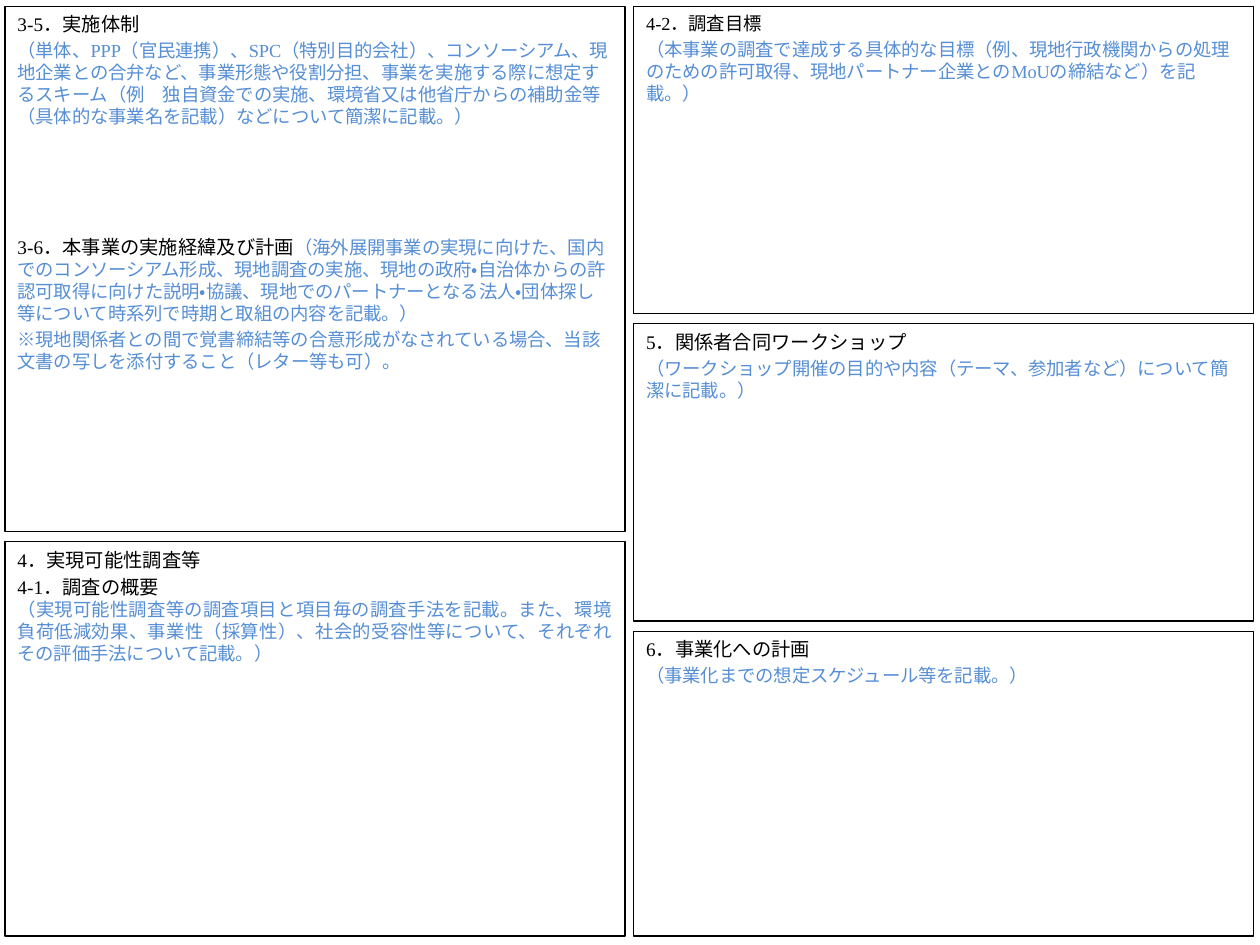
from pptx import Presentation
from pptx.dml.color import RGBColor
from pptx.enum.lang import MSO_LANGUAGE_ID
from pptx.enum.shapes import MSO_SHAPE
from pptx.enum.text import MSO_ANCHOR, PP_ALIGN
from pptx.util import Inches, Pt

RECTANGLE = MSO_SHAPE.RECTANGLE
TOP = MSO_ANCHOR.TOP
LEFT, JUSTIFY = PP_ALIGN.LEFT, PP_ALIGN.JUSTIFY
JAPANESE = MSO_LANGUAGE_ID.JAPANESE
BLACK = RGBColor(0x00, 0x00, 0x00)
BLUE = RGBColor(0x55, 0x8E, 0xD5)

PAGE_WIDTH, PAGE_HEIGHT = 10, 7.5
COLUMN_LEFTS = (0.04, 5.03)
COLUMN_WIDTH = 4.92
COLUMN_TOP = 0.05
ROW_GAP = 0.08

HEADING = {"size": Pt(11), "color": BLACK}
SMALL_HEADING = {"size": Pt(10.5), "color": BLACK}
GUIDE = {"size": Pt(10.5), "color": BLUE}
NORMAL_GAP, NO_GAP, SECTION_GAP = 2.2, 0, 61.5

# Each paragraph: (space before in points, alignment, [(text, style), ...])
STRUCTURE = [
    (NO_GAP, LEFT, [("3-5．実施体制", HEADING)]),
    (NORMAL_GAP, LEFT, [(
        "（単体、PPP（官民連携）、SPC（特別目的会社）、コンソーシアム、現地企業との合弁など、"
        "事業形態や役割分担、事業を実施する際に想定するスキーム（例　独自資金での実施、"
        "環境省又は他省庁からの補助金等（具体的な事業名を記載）などについて簡潔に記載。）", GUIDE)]),
    (SECTION_GAP, LEFT, [
        ("3-6．本事業の実施経緯及び計画", HEADING),
        ("（海外展開事業の実現に向けた、国内でのコンソーシアム形成、現地調査の実施、"
         "現地の政府・自治体からの許認可取得に向けた説明・協議、現地でのパートナーとなる"
         "法人・団体探し等について時系列で時期と取組の内容を記載。）", GUIDE)]),
    (NORMAL_GAP, LEFT, [(
        "※現地関係者との間で覚書締結等の合意形成がなされている場合、"
        "当該文書の写しを添付すること（レター等も可）。", GUIDE)]),
]
FEASIBILITY = [
    (NO_GAP, LEFT, [("4．実現可能性調査等", HEADING)]),
    (NORMAL_GAP, LEFT, [("4-1．調査の概要", HEADING)]),
    (NO_GAP, JUSTIFY, [(
        "（実現可能性調査等の調査項目と項目毎の調査手法を記載。また、環境負荷低減効果、"
        "事業性（採算性）、社会的受容性等について、それぞれその評価手法について記載。）", GUIDE)]),
]
GOALS = [
    (NO_GAP, LEFT, [("4-2．調査目標", SMALL_HEADING)]),
    (NORMAL_GAP, LEFT, [(
        "（本事業の調査で達成する具体的な目標（例、現地行政機関からの処理のための許可取得、"
        "現地パートナー企業とのMoUの締結など）を記載。）", GUIDE)]),
]
WORKSHOP = [
    (NO_GAP, LEFT, [("5．関係者合同ワークショップ", HEADING)]),
    (NORMAL_GAP, LEFT, [(
        "（ワークショップ開催の目的や内容（テーマ、参加者など）について簡潔に記載。）", GUIDE)]),
]
BUSINESS_PLAN = [
    (NO_GAP, LEFT, [("6．事業化への計画", HEADING)]),
    (NORMAL_GAP, LEFT, [("（事業化までの想定スケジュール等を記載。）", GUIDE)]),
]
COLUMNS = [
    [(4.17, STRUCTURE), (3.13, FEASIBILITY)],
    [(2.44, GOALS), (2.36, WORKSHOP), (2.42, BUSINESS_PLAN)],
]


def add_span(para, text, style):
    span = para.add_run()
    span.text = text
    span.font.name = "Times New Roman"
    span.font.language_id = JAPANESE
    span.font.size = style["size"]
    span.font.color.rgb = style["color"]


def add_section(page, left, top, width, height, paragraphs):
    box = page.shapes.add_shape(
        RECTANGLE, Inches(left), Inches(top), Inches(width), Inches(height))
    box.shadow.inherit = False
    box.fill.background()
    box.line.color.rgb = BLACK
    box.line.width = Pt(0.75)
    frame = box.text_frame
    frame.word_wrap = True
    frame.vertical_anchor = TOP
    for index, (gap, alignment, spans) in enumerate(paragraphs):
        para = frame.add_paragraph() if index else frame.paragraphs[0]
        para.alignment = alignment
        if gap:
            para.space_before = Pt(gap)
        for text, style in spans:
            add_span(para, text, style)


def add_column(page, left, sections):
    """Stack the sections downwards with an equal gap."""
    top = COLUMN_TOP
    for height, paragraphs in sections:
        add_section(page, left, top, COLUMN_WIDTH, height, paragraphs)
        top += height + ROW_GAP


def main():
    deck = Presentation()
    deck.slide_width, deck.slide_height = Inches(PAGE_WIDTH), Inches(PAGE_HEIGHT)
    page = deck.slides.add_slide(deck.slide_layouts[6])
    for left, sections in zip(COLUMN_LEFTS, COLUMNS):
        add_column(page, left, sections)
    deck.save("out.pptx")


if __name__ == "__main__":
    main()
